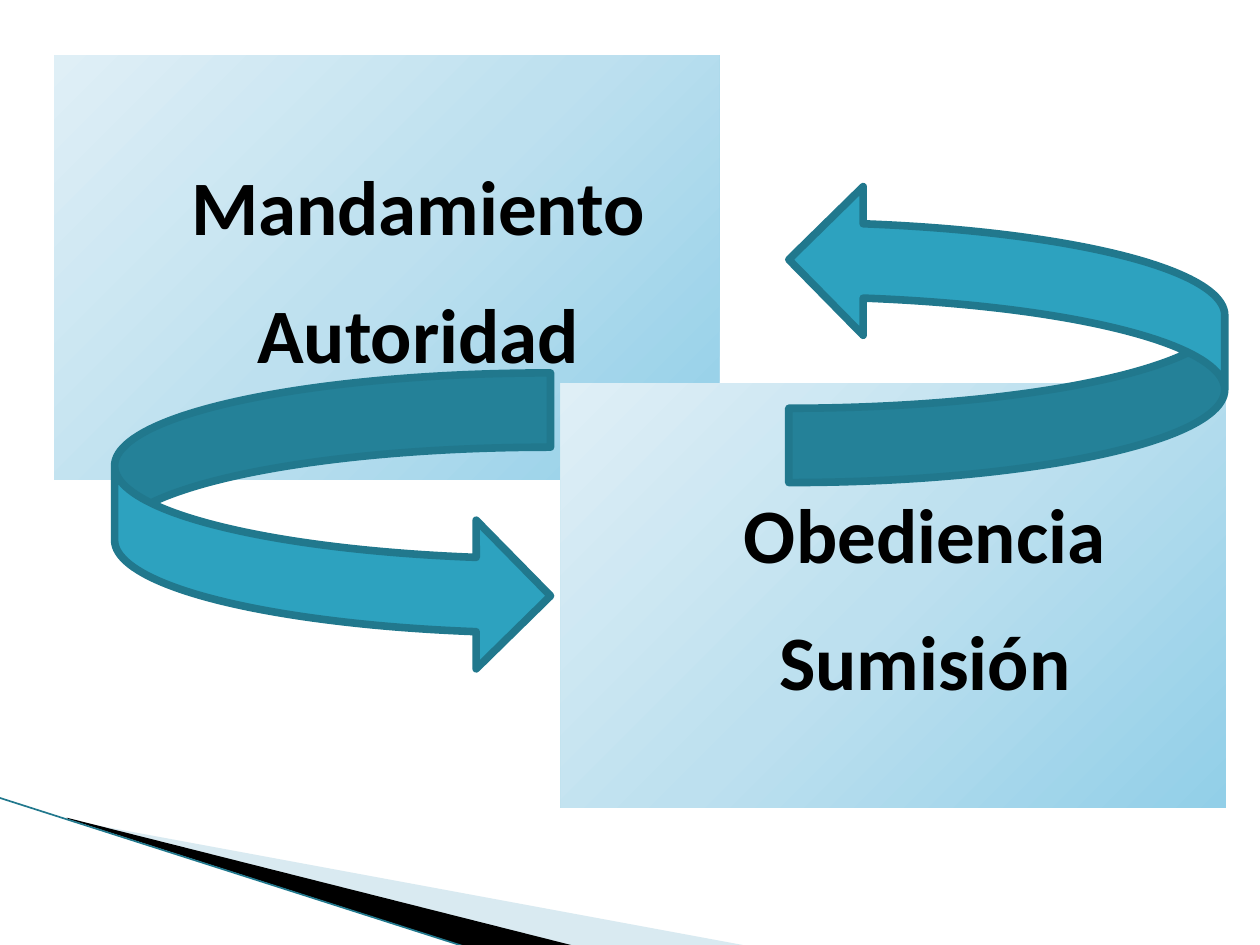
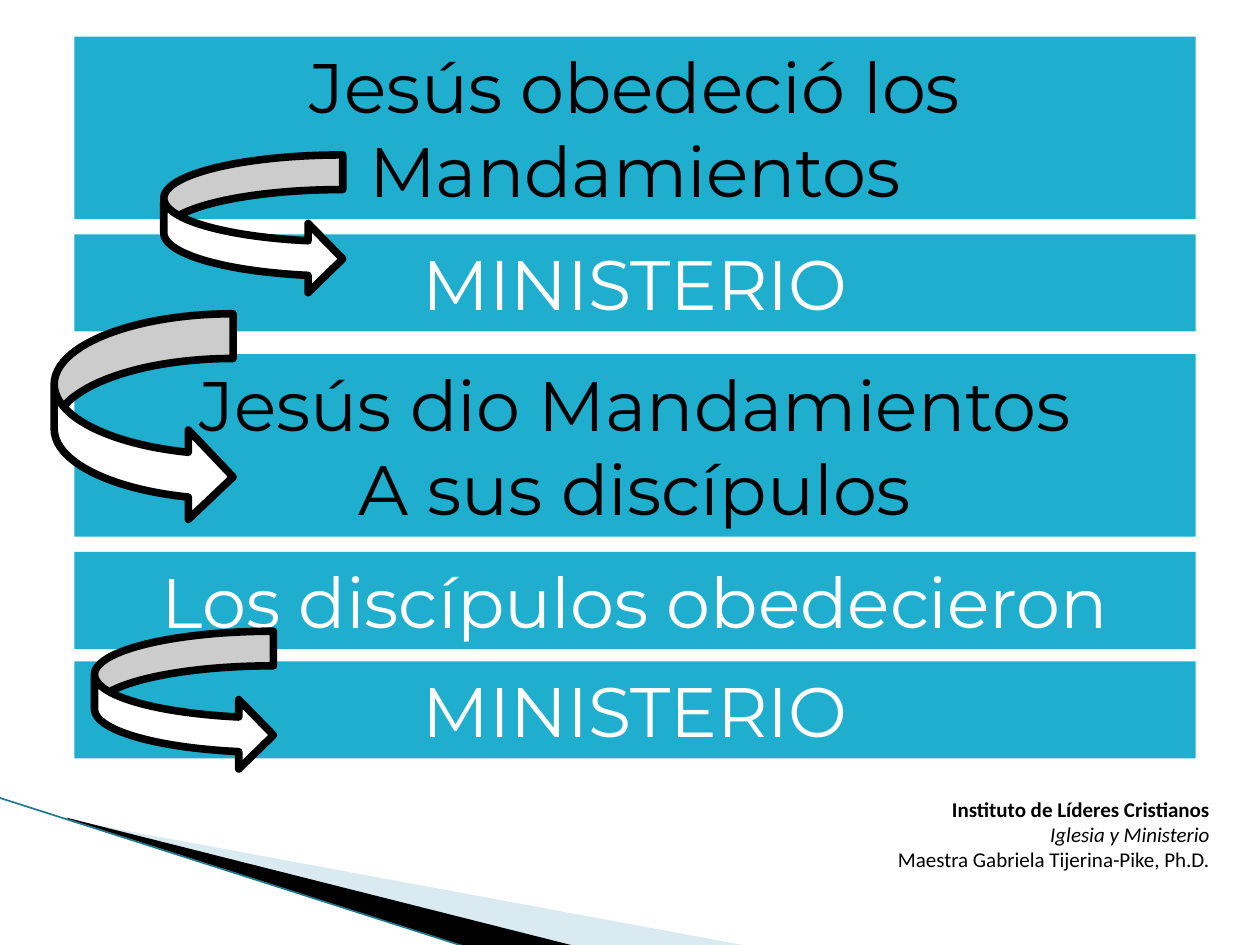
from copy import deepcopy
from dataclasses import dataclass

from lxml.etree import SubElement
from pptx import Presentation
from pptx.dml.color import RGBColor
from pptx.enum.shapes import MSO_CONNECTOR, MSO_SHAPE
from pptx.enum.text import MSO_ANCHOR, PP_ALIGN
from pptx.oxml.ns import qn
from pptx.shapes.autoshape import Shape
from pptx.slide import Slide, SlideLayout
from pptx.text.text import TextFrame
from pptx.util import Emu, Pt

EMU_PER_PX = 9144  # 100 px to the inch

BLACK, WHITE = "000000", "FFFFFF"
TEAL, DARK_TEAL, BAR_BLUE = "2DA2BF", "21788D", "1FAECD"
PALE_BLUE = "A0CBDC"
PANEL_STOPS = ((0, "92CFE8"), (0.5, "BDE0EF"), (1, "DFEFF6"))
ARROW_LINE_PT = 4.33
BAR_LEFT, BAR_WIDTH = 59, 890
BAR_HEIGHTS = {1: 77, 2: 145}  # by number of text lines
PANEL_WIDTH, PANEL_HEIGHT = 528, 337


@dataclass(frozen=True)
class Box:
    left: int
    top: int
    width: int
    height: int


@dataclass(frozen=True)
class TextStyle:
    font: str
    size: int
    color: str = BLACK
    bold: bool = False
    italic: bool = False
    align: PP_ALIGN = PP_ALIGN.CENTER


@dataclass(frozen=True)
class Panel:
    left: int
    top: int
    words: tuple[str, ...]


@dataclass(frozen=True)
class Bar:
    top: int
    paragraphs: tuple[str, ...]
    color: str
    lines: int = 1


@dataclass(frozen=True)
class Arrow:
    box: Box
    fill: str
    outline: str
    rotation: int = 0


PANELS = (
    Panel(43, 44, ("Mandamiento", "Autoridad")),
    Panel(445, 304, ("Obediencia", "Sumisión")),
)
CYCLE_ARROWS = (
    Arrow(Box(91, 296, 346, 236), TEAL, DARK_TEAL),
    Arrow(Box(626, 147, 346, 236), TEAL, DARK_TEAL, 180),
)
BARS = (
    Bar(29, ("Jesús obedeció los Mandamientos",), BLACK, 2),
    Bar(186, ("MINISTERIO",), WHITE),
    Bar(281, ("Jesús dio Mandamientos", "A sus discípulos"), BLACK, 2),
    Bar(438, ("Los discípulos obedecieron",), WHITE),
    Bar(525, ("MINISTERIO",), WHITE),
)
STEP_ARROWS = tuple(
    Arrow(Box(left, top, 142, height), WHITE, BLACK)
    for left, top, height in ((130, 123, 110), (43, 249, 165), (75, 501, 110))
)
CREDITS = (
    ("Instituto de Líderes Cristianos",
     TextStyle("Calibri", 12, bold=True, align=PP_ALIGN.RIGHT)),
    ("Iglesia y Ministerio",
     TextStyle("Calibri", 12, italic=True, align=PP_ALIGN.RIGHT)),
    ("Maestra Gabriela Tijerina-Pike, Ph.D.",
     TextStyle("Calibri", 12, align=PP_ALIGN.RIGHT)),
)


def px(length: int) -> Emu:
    return Emu(length * EMU_PER_PX)


def rgb(color: str) -> RGBColor:
    return RGBColor.from_string(color)


def place(box: Box) -> tuple[Emu, Emu, Emu, Emu]:
    return px(box.left), px(box.top), px(box.width), px(box.height)


def write(frame: TextFrame, lines: list[tuple[str, TextStyle]], gap: int = 0) -> None:
    """Write one paragraph per line, with gap points between them."""
    frame.word_wrap = True
    frame.text = "\n".join(text for text, _ in lines)
    for index, (paragraph, (_, style)) in enumerate(zip(frame.paragraphs, lines)):
        paragraph.alignment = style.align
        if index and gap:
            paragraph.space_before = Pt(gap)
        for run in paragraph.runs:
            font = run.font
            font.name, font.size = style.font, Pt(style.size)
            font.bold, font.italic = style.bold, style.italic
            font.color.rgb = rgb(style.color)


def add_rectangle(slide: Slide, box: Box) -> Shape:
    rectangle = slide.shapes.add_shape(MSO_SHAPE.RECTANGLE, *place(box))
    rectangle.shadow.inherit = False
    rectangle.line.fill.background()
    return rectangle


def fill_gradient(shape: Shape) -> None:
    """Shade from the lower right corner to the upper left one."""
    shape.fill.gradient()
    shape.fill.gradient_angle = 135
    stop_list = shape.element.spPr.find(".//" + qn("a:gsLst"))
    stop_list.append(deepcopy(stop_list[-1]))
    for stop, (position, color) in zip(shape.fill.gradient_stops, PANEL_STOPS):
        stop.position = position
        stop.color.rgb = rgb(color)


def add_panel(slide: Slide, panel: Panel) -> None:
    rectangle = add_rectangle(
        slide, Box(panel.left, panel.top, PANEL_WIDTH, PANEL_HEIGHT))
    fill_gradient(rectangle)
    frame = rectangle.text_frame
    frame.vertical_anchor = MSO_ANCHOR.TOP
    frame.margin_left, frame.margin_top = px(60), px(82)
    style = TextStyle("Calibri", 44, bold=True)
    write(frame, [(word, style) for word in panel.words], gap=20)


def add_bar(slide: Slide, bar: Bar) -> None:
    rectangle = add_rectangle(
        slide, Box(BAR_LEFT, bar.top, BAR_WIDTH, BAR_HEIGHTS[bar.lines]))
    rectangle.fill.solid()
    rectangle.fill.fore_color.rgb = rgb(bar.color and BAR_BLUE)
    rectangle.text_frame.vertical_anchor = MSO_ANCHOR.MIDDLE
    style = TextStyle("Montserrat", 40, bar.color)
    write(rectangle.text_frame, [(text, style) for text in bar.paragraphs])


def add_arrow(slide: Slide, arrow: Arrow) -> None:
    ribbon = slide.shapes.add_shape(MSO_SHAPE.CURVED_RIGHT_ARROW, *place(arrow.box))
    ribbon.shadow.inherit = False
    ribbon.rotation = arrow.rotation
    ribbon.fill.solid()
    ribbon.fill.fore_color.rgb = rgb(arrow.fill)
    ribbon.line.color.rgb = rgb(arrow.outline)
    ribbon.line.width = Pt(ARROW_LINE_PT)


def add_wedge(slide: Slide, points: list[tuple[int, int]], color: str) -> Shape:
    builder = slide.shapes.build_freeform(*points[0], scale=EMU_PER_PX)
    builder.add_line_segments(points[1:], close=True)
    wedge = builder.convert_to_shape()
    wedge.shadow.inherit = False
    wedge.line.fill.background()
    wedge.fill.solid()
    wedge.fill.fore_color.rgb = rgb(color)
    return wedge


def add_corner(slide: Slide, layout: SlideLayout) -> None:
    """Draw the corner wedges and hand them to the layout all slides share."""
    pale = add_wedge(slide, [(55, 651), (595, 751), (456, 751), (55, 650)], PALE_BLUE)
    tint = pale.element.spPr.find(".//" + qn("a:srgbClr"))
    SubElement(tint, qn("a:alpha"), val="40000")
    dark = add_wedge(slide, [(53, 649), (457, 751), (372, 752), (54, 650)], BLACK)
    edge = slide.shapes.add_connector(
        MSO_CONNECTOR.STRAIGHT, px(-1), px(633), px(371), px(752))
    edge.line.color.rgb = rgb(DARK_TEAL)
    edge.line.width = Pt(0.95)
    SubElement(edge.element.spPr, qn("a:effectLst"))
    for part in (pale, dark, edge):
        layout.shapes.element.append(part.element)


def build_cycle(slide: Slide) -> None:
    for panel in PANELS:
        add_panel(slide, panel)
    for arrow in CYCLE_ARROWS:
        add_arrow(slide, arrow)


def build_steps(slide: Slide) -> None:
    for bar in BARS:
        add_bar(slide, bar)
    credit = slide.shapes.add_textbox(*place(Box(594, 627, 376, 71)))
    write(credit.text_frame, list(CREDITS))
    for arrow in STEP_ARROWS:
        add_arrow(slide, arrow)


def main() -> None:
    prs = Presentation()
    prs.slide_width, prs.slide_height = px(1000), px(750)
    blank = prs.slide_layouts[6]
    cycle = prs.slides.add_slide(blank)
    add_corner(cycle, blank)
    build_cycle(cycle)
    build_steps(prs.slides.add_slide(blank))
    prs.save("out.pptx")


if __name__ == "__main__":
    main()
